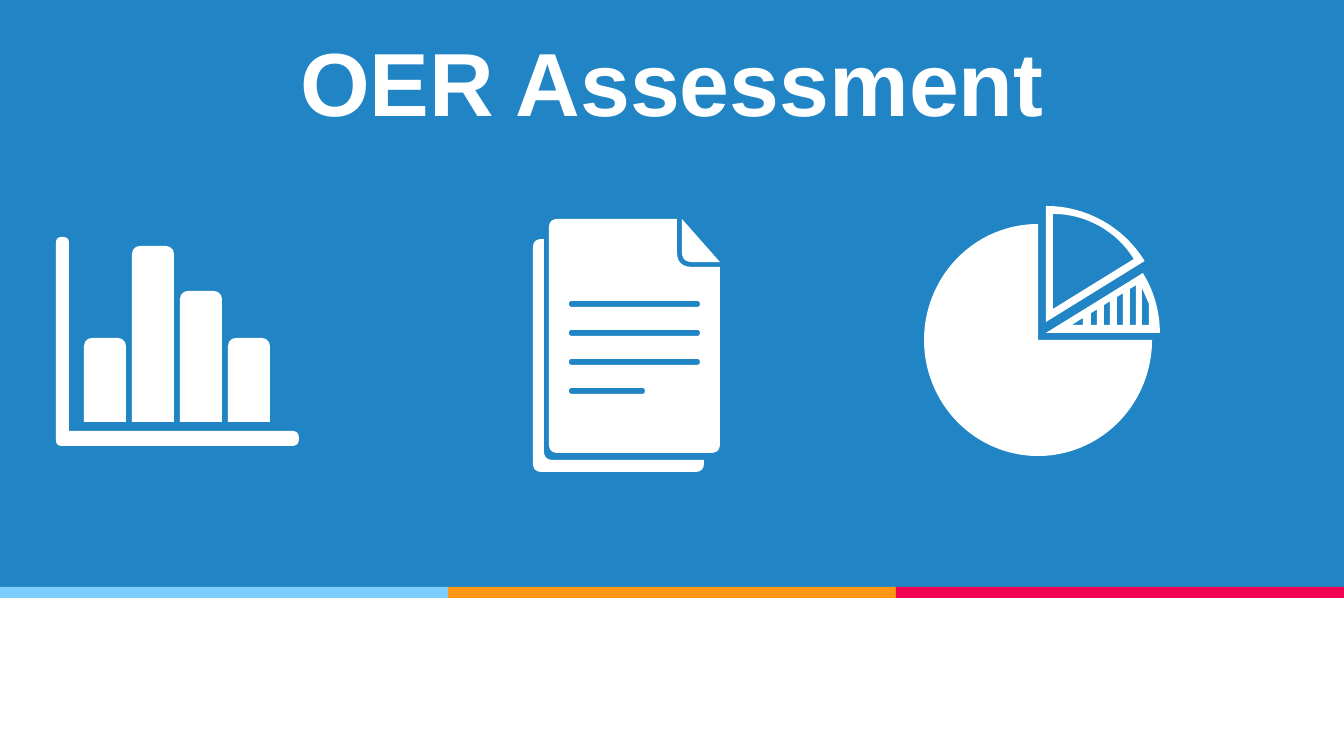
import math

import pptx
import pptx.dml.color
import pptx.enum.shapes
import pptx.enum.text
import pptx.util

EMU_PER_PX = 914400 / 134.4
WHITE = pptx.dml.color.RGBColor(0xFF, 0xFF, 0xFF)
BLUE = pptx.dml.color.RGBColor(0x21, 0x85, 0xC5)
SKY = pptx.dml.color.RGBColor(0x7E, 0xCE, 0xFD)
ORANGE = pptx.dml.color.RGBColor(0xFF, 0x97, 0x15)
CRIMSON = pptx.dml.color.RGBColor(0xF2, 0x02, 0x53)
PRESET = pptx.enum.shapes.MSO_SHAPE


def px(length):
    """Turn pixels into EMU."""
    return pptx.util.Emu(round(length * EMU_PER_PX))


def paint(shape, color):
    """Give a shape a flat fill with no line or shadow."""
    shape.shadow.inherit = False
    shape.fill.solid()
    shape.fill.fore_color.rgb = color
    shape.line.fill.background()
    return shape


def add_preset(slide, preset, left, top, width, height, color):
    """Add a flat preset shape."""
    box = [px(length) for length in (left, top, width, height)]
    return paint(slide.shapes.add_shape(preset, *box), color)


def add_outline(slide, left, top, *contours):
    """Add a white freeform whose contours are relative to left and top."""
    contours = [[(px(x), px(y)) for x, y in contour] for contour in contours]
    builder = slide.shapes.build_freeform(*contours[0][0])
    builder.add_line_segments(contours[0][1:])
    for contour in contours[1:]:
        builder.move_to(*contour[0])
        builder.add_line_segments(contour[1:])
    return paint(builder.convert_to_shape(px(left), px(top)), WHITE)


def rounded(*corners, steps=6):
    """Return the points of a polygon whose corners are (x, y, radius)."""
    points = []
    for index, (x, y, radius) in enumerate(corners):
        if not radius:
            points.append((x, y))
            continue
        ends = []
        for near_x, near_y, _ in (corners[index - 1], corners[(index + 1) % len(corners)]):
            share = radius / math.hypot(near_x - x, near_y - y)
            ends.append((x + (near_x - x) * share, y + (near_y - y) * share))
        (start_x, start_y), (end_x, end_y) = ends
        for step in range(steps + 1):
            t = step / steps
            a, b, c = (1 - t) ** 2, 2 * t * (1 - t), t ** 2
            points.append((a * start_x + b * x + c * end_x, a * start_y + b * y + c * end_y))
    return points + points[:1]


def wedge(x, y, radius, start, end, steps=16):
    """Return the points of a pie slice between two angles in degrees."""
    angles = [math.radians(start + (end - start) * step / steps) for step in range(steps + 1)]
    arc = [(x + radius * math.cos(angle), y + radius * math.sin(angle)) for angle in angles]
    return [(x, y), *arc, (x, y)]


def add_backdrop(slide, width, height):
    """Draw the blue field and the three-colour band below it."""
    add_preset(slide, PRESET.RECTANGLE, 0, 0, width, height, BLUE)
    part = width // 3
    for index, color in enumerate((SKY, ORANGE, CRIMSON)):
        add_preset(slide, PRESET.RECTANGLE, index * part, height, part, 11, color)


def add_title(slide, left, top, width, height):
    """Write the title at the bottom of its box."""
    title = slide.shapes.add_textbox(px(left), px(top), px(width), px(height)).text_frame
    title.word_wrap = True
    title.vertical_anchor = pptx.enum.text.MSO_ANCHOR.BOTTOM
    title.margin_left = title.margin_right = title.margin_top = title.margin_bottom = pptx.util.Inches(0.1)
    heading = title.paragraphs[0]
    heading.text = "OER Assessment"
    heading.alignment = pptx.enum.text.PP_ALIGN.CENTER
    heading.font.name = "Arial"
    heading.font.size = pptx.util.Pt(48)
    heading.font.bold = True
    heading.font.color.rgb = WHITE


def add_bars_icon(slide, left, top):
    """Draw the bar chart icon."""
    axes = rounded((0, 0, 6), (13, 0, 6), (13, 194, 0), (243, 194, 7), (243, 209, 7), (0, 209, 6))
    parts = [add_outline(slide, left, top, axes)]
    for index, height in enumerate((84, 176, 131, 84)):
        bar = add_preset(slide, PRESET.ROUND_2_SAME_RECTANGLE, left + 28 + 48 * index,
                         top + 185 - height, 42, height, WHITE)
        bar.adjustments[0] = 0.19
        parts.append(bar)
    slide.shapes.add_group_shape(parts)


def add_document_icon(slide, left, top):
    """Draw the icon of two stacked pages."""
    back = rounded((0, 20, 9), (11, 20, 0), (11, 241, 9), (171, 241, 0), (171, 253, 9), (0, 253, 9))
    front = rounded((16, 0, 9), (144, 0, 0), (144, 48, 15), (187, 48, 0), (187, 234, 9), (16, 234, 9))
    fold = rounded((149, 0, 0), (149, 43, 10), (187, 43, 0))
    text_lines = []
    for index, right in enumerate((167, 167, 167, 112)):
        y = 82 + 29 * index
        text_lines.append(rounded((36, y, 3), (right, y, 3), (right, y + 6, 3), (36, y + 6, 3)))
    slide.shapes.add_group_shape([
        add_outline(slide, left, top, back),
        add_outline(slide, left, top, front, *text_lines),
        add_outline(slide, left, top, fold),
    ])


def add_pie_icon(slide, left, top):
    """Draw the pie chart icon with an open and a striped slice."""
    split, base, tip, slope = -31.7, 119, 148, 0.62
    stripes = [[(tip, base), (159, 112), (159, base), (tip, base)]]
    for x in range(167, 207, 13):
        stripes.append([(x, base), (x, base - slope * (x - tip)),
                        (x + 6, base - slope * (x + 6 - tip)), (x + 6, base), (x, base)])
    stripes.append([(218, base), (218, 82), (222, 91), (225, 98), (225, base), (218, base)])
    slide.shapes.add_group_shape([
        add_preset(slide, PRESET.PIE, left, top + 18, 228, 232, WHITE),
        add_outline(slide, left, top, wedge(122, 127, 114, split, 0), *stripes),
        add_outline(slide, left, top, wedge(122, 116, 116, -90, split), wedge(129, 103, 95, -90, split)),
    ])


def main():
    """Build the slide and save it."""
    deck = pptx.Presentation()
    deck.slide_width, deck.slide_height = px(1344), px(756)
    slide = deck.slides.add_slide(deck.slide_layouts[6])
    add_backdrop(slide, 1344, 587)
    add_title(slide, 101, 66, 1142, 82)
    add_pie_icon(slide, 924, 206)
    add_document_icon(slide, 533, 219)
    add_bars_icon(slide, 56, 237)
    deck.save("out.pptx")


if __name__ == "__main__":
    main()
